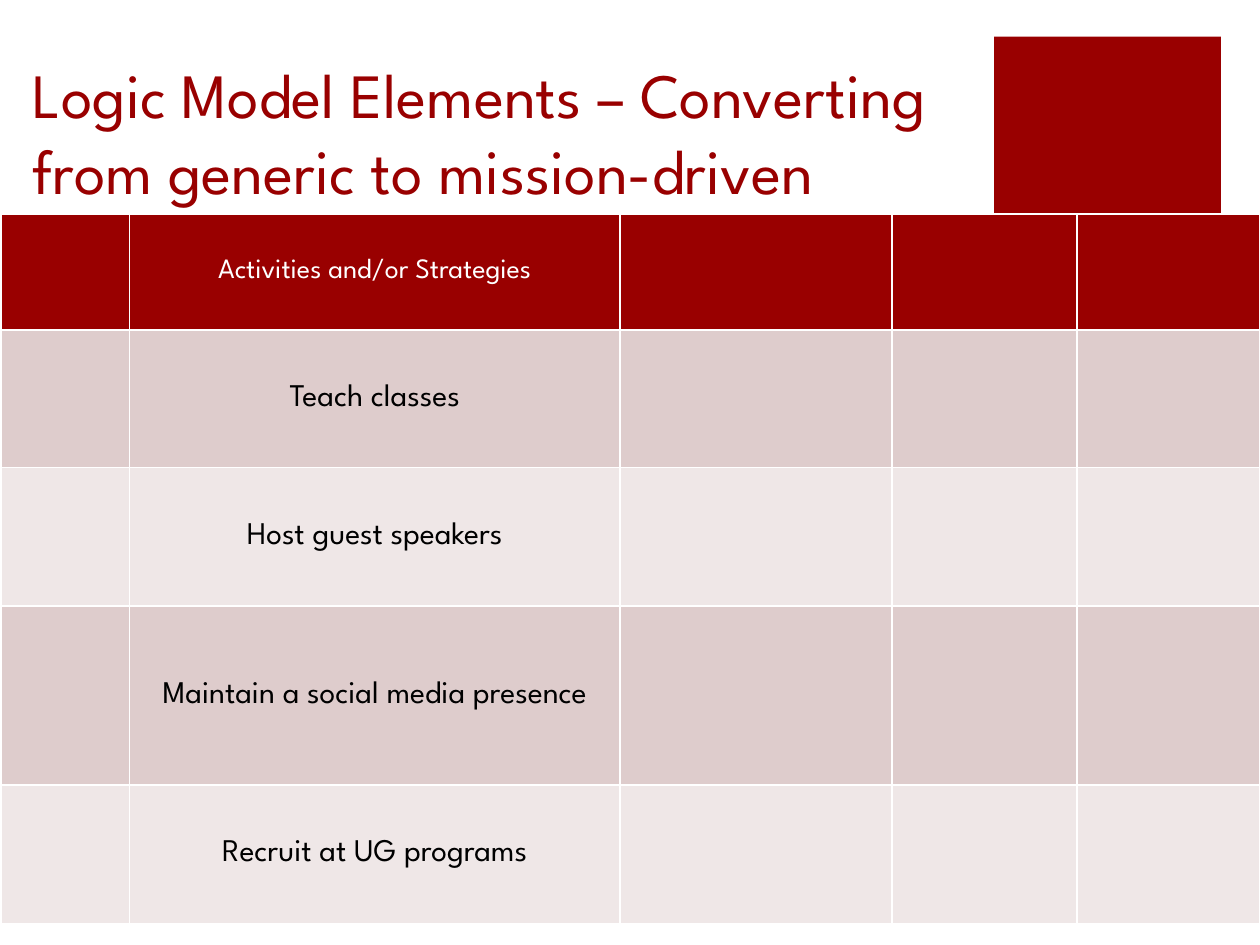
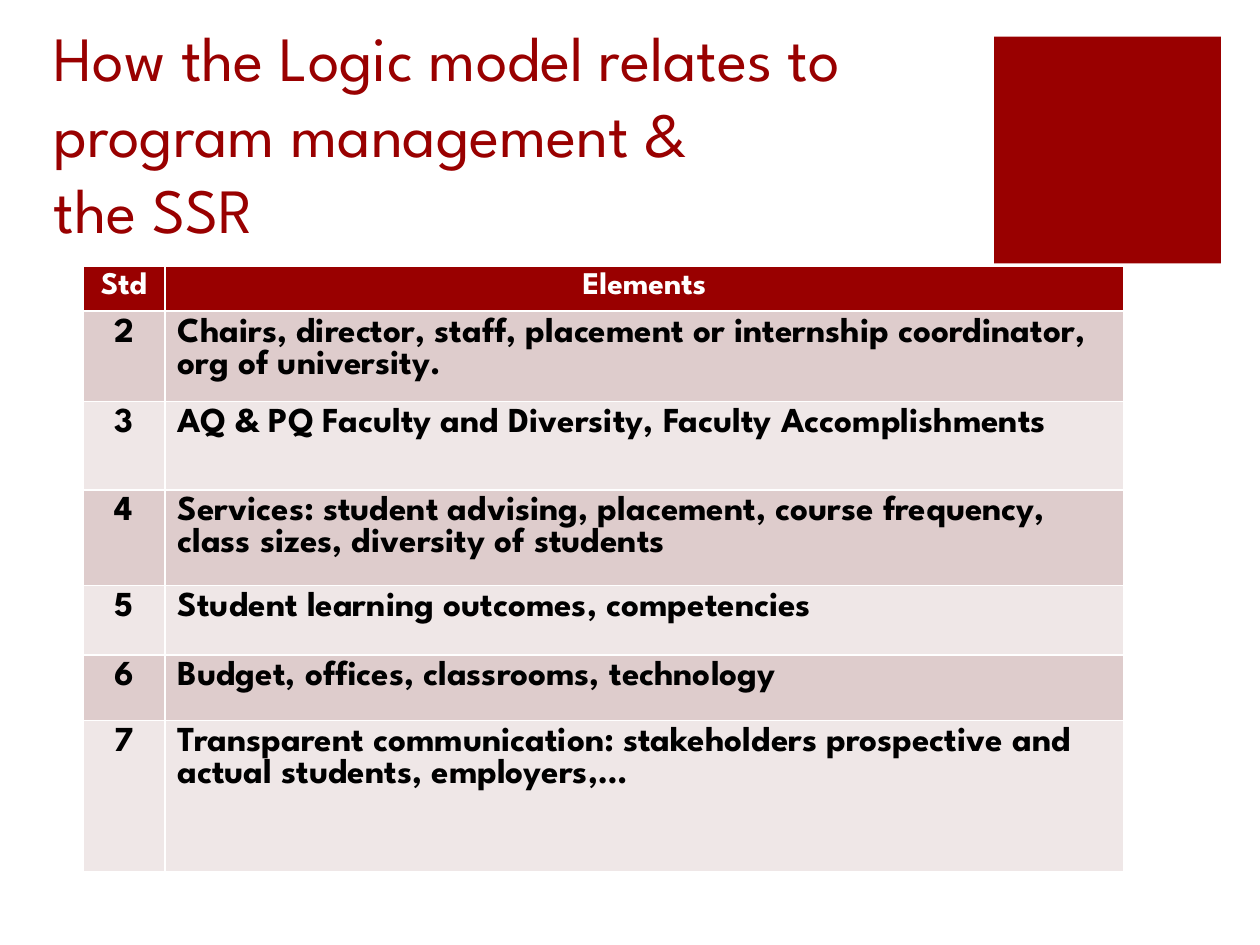
from dataclasses import dataclass

import pptx
import pptx.dml.color
import pptx.enum.shapes
import pptx.enum.text
import pptx.oxml
import pptx.oxml.ns
import pptx.slide
import pptx.table
import pptx.util

Inches = pptx.util.Inches
Pt = pptx.util.Pt
RGBColor = pptx.dml.color.RGBColor
Align = pptx.enum.text.PP_ALIGN
Anchor = pptx.enum.text.MSO_ANCHOR

FONT = "League Spartan"
CRIMSON = RGBColor(0x99, 0x00, 0x00)
WHITE = RGBColor(0xFF, 0xFF, 0xFF)
BLACK = RGBColor(0x00, 0x00, 0x00)
BANDS = (RGBColor(0xDE, 0xCC, 0xCC), RGBColor(0xEF, 0xE7, 0xE7))


@dataclass(frozen=True)
class Title:
    text: str
    left: float
    top: float
    width: float
    height: float


@dataclass(frozen=True)
class Grid:
    """A banded table; the first row is the header."""
    left: float
    top: float
    columns: tuple[float, ...]
    heights: tuple[float, ...]
    rows: list[tuple[str, ...]]
    header_size: int
    body_size: int
    bold: bool
    anchor: Anchor
    left_columns: tuple[int, ...] = ()
    margin_bottom: float = 0.05


ACTIVITIES = ("Activities and/or Strategies", "Teach classes", "Host guest speakers",
              "Maintain a social media presence", "Recruit at UG programs")

SLIDES = [
    (
        Title("Logic Model Elements – Converting from generic to mission-driven",
              0.16, 0.68, 7.48, 1.01),
        Grid(0.01, 1.7, (1.02, 3.89, 2.16, 1.47, 1.45), (0.92, 1.09, 1.1, 1.42, 1.1),
             [("", activity, "", "", "") for activity in ACTIVITIES],
             header_size=16, body_size=18, bold=False, anchor=Anchor.MIDDLE),
    ),
    (
        Title("How the Logic model relates to program management &\vthe SSR",
              0.33, 0.43, 7.47, 1.57),
        Grid(0.66, 2.11, (0.65, 7.61), (0.36, 0.7, 0.7, 0.76, 0.55, 0.52, 1.2),
             [("Std", "Elements"),
              ("2", "Chairs, director, staff, placement or internship coordinator, "
                    "org of university."),
              ("3", "AQ & PQ Faculty and Diversity, Faculty Accomplishments"),
              ("4", "Services: student advising, placement, course frequency, "
                    "class sizes, diversity of students"),
              ("5", "Student learning outcomes, competencies"),
              ("6", "Budget, offices, classrooms, technology"),
              ("7", "Transparent communication: stakeholders prospective and "
                    "actual students, employers,…")],
             header_size=18, body_size=20, bold=True, anchor=Anchor.TOP,
             left_columns=(1,), margin_bottom=0),
    ),
]


def format_font(font, size: int, color: RGBColor, bold: bool = False) -> None:
    for name, value in {"name": FONT, "size": Pt(size), "bold": bold}.items():
        setattr(font, name, value)
    font.color.rgb = color


def add_corner_square(slide: pptx.slide.Slide) -> None:
    sp = slide.shapes.add_shape(pptx.enum.shapes.MSO_SHAPE.RECTANGLE,
                                Inches(7.89), Inches(0.29), Inches(1.8), Inches(1.8))
    sp.shadow.inherit = False
    sp.fill.solid()
    sp.fill.fore_color.rgb = CRIMSON
    sp.line.fill.background()


def add_title(slide: pptx.slide.Slide, title: Title) -> None:
    box = (title.left, title.top, title.width, title.height)
    tf = slide.shapes.add_textbox(*map(Inches, box)).text_frame
    tf.word_wrap = True
    tf.vertical_anchor = Anchor.BOTTOM
    p = tf.paragraphs[0]
    p.text = title.text
    for r in p.runs:
        format_font(r.font, 36, CRIMSON)


def set_borders(cell: pptx.table._Cell) -> None:
    """Draw a 1 pt white line on each side; call before filling the cell."""
    tc_pr = cell._tc.get_or_add_tcPr()
    for side in "LRTB":
        tc_pr.append(pptx.oxml.parse_xml(
            f'<a:ln{side} {pptx.oxml.ns.nsdecls("a")} w="{Pt(1)}"><a:solidFill>'
            f'<a:srgbClr val="{WHITE}"/></a:solidFill></a:ln{side}>'))


def add_grid(slide: pptx.slide.Slide, grid: Grid) -> None:
    table = slide.shapes.add_table(
        len(grid.heights), len(grid.columns), Inches(grid.left), Inches(grid.top),
        Inches(sum(grid.columns)), Inches(sum(grid.heights))).table
    for column, width in zip(table.columns, grid.columns):
        column.width = Inches(width)
    for i, (row, height) in enumerate(zip(table.rows, grid.heights)):
        row.height = Inches(height)
        header = i == 0
        for j, cell in enumerate(row.cells):
            set_borders(cell)
            cell.fill.solid()
            cell.fill.fore_color.rgb = CRIMSON if header else BANDS[(i - 1) % 2]
            cell.vertical_anchor = grid.anchor
            cell.margin_bottom = Inches(grid.margin_bottom)
            p = cell.text_frame.paragraphs[0]
            p.text = grid.rows[i][j]
            p.alignment = Align.LEFT if j in grid.left_columns and not header else Align.CENTER
            for r in p.runs:
                format_font(r.font, grid.header_size if header else grid.body_size,
                            WHITE if header else BLACK, grid.bold)


def main() -> None:
    prs = pptx.Presentation()
    prs.slide_width, prs.slide_height = Inches(10), Inches(7.5)
    for title, grid in SLIDES:
        slide = prs.slides.add_slide(prs.slide_layouts[6])
        add_corner_square(slide)
        add_title(slide, title)
        add_grid(slide, grid)
    prs.save("out.pptx")


if __name__ == "__main__":
    main()
